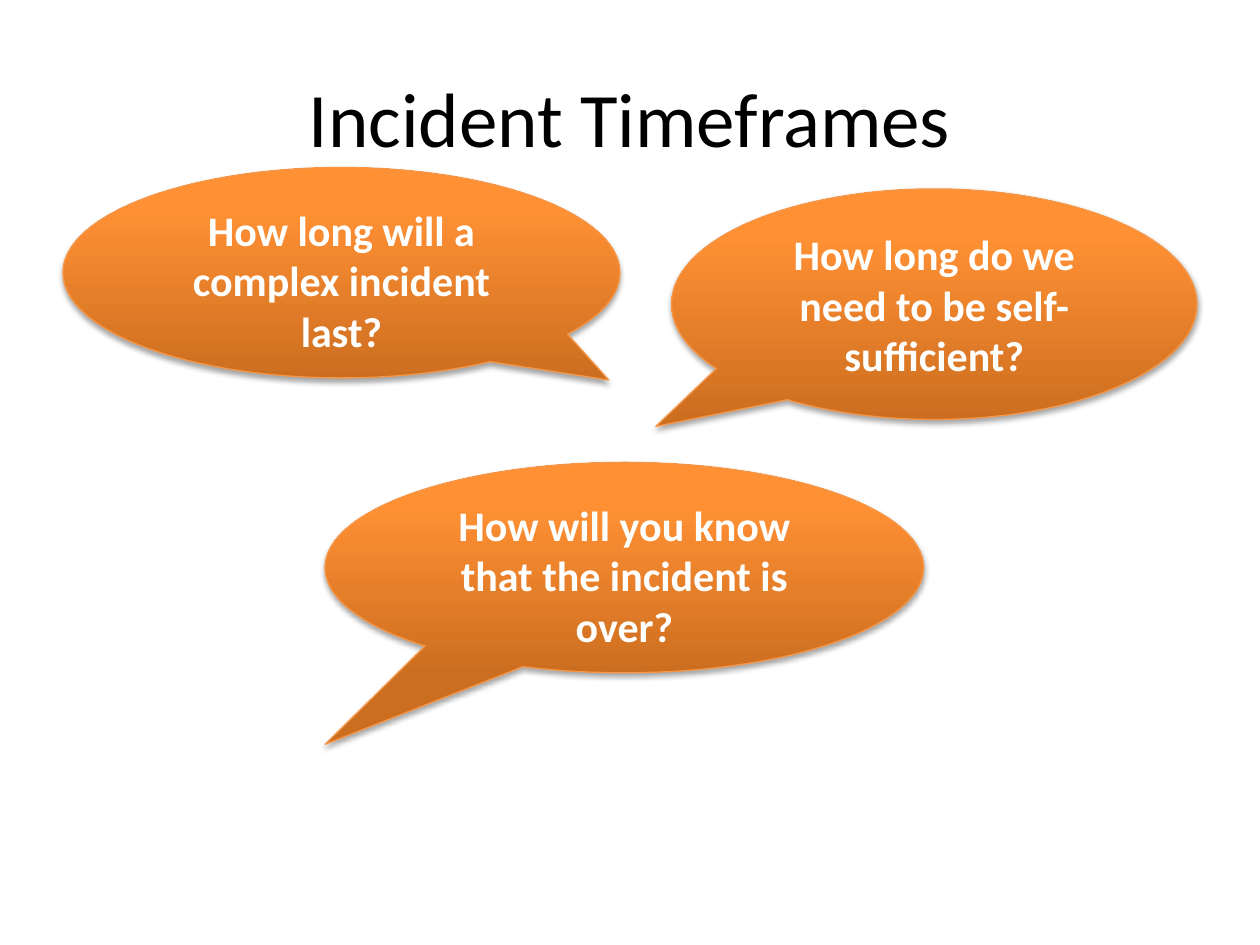
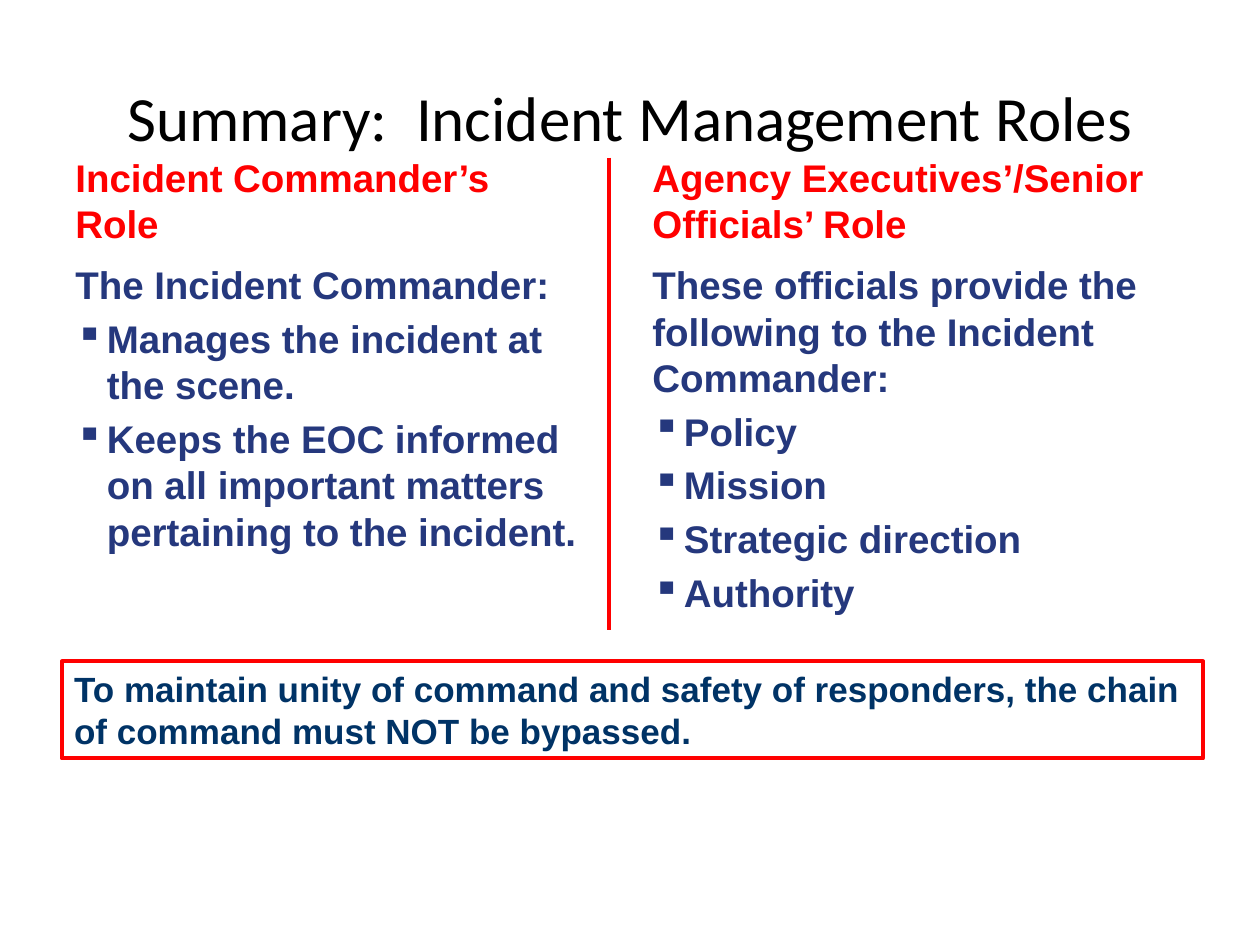
from dataclasses import dataclass

import pptx
import pptx.dml.color
import pptx.enum.shapes
import pptx.enum.text
import pptx.oxml
import pptx.oxml.ns
import pptx.slide
import pptx.text.text
import pptx.util
from lxml import etree

Inches = pptx.util.Inches
Pt = pptx.util.Pt
qn = pptx.oxml.ns.qn
Shape = pptx.enum.shapes.MSO_SHAPE
Align = pptx.enum.text.PP_ALIGN
Anchor = pptx.enum.text.MSO_ANCHOR

BLACK, WHITE, RED = "000000", "FFFFFF", "FF0000"
NAVY, DEEP_BLUE, ORANGE = "25387D", "003366", "F79646"
CALLOUT_STOPS = ((0, "CC6E20"), (80, "FF9034"), (100, "FF9136"))


@dataclass(frozen=True)
class Box:
    left: float
    top: float
    width: float
    height: float

    def emu(self) -> list[int]:
        return [Inches(v) for v in (self.left, self.top, self.width, self.height)]


@dataclass(frozen=True)
class Callout:
    text: str
    box: Box
    tip: tuple[float, float]


@dataclass(frozen=True)
class RoleColumn:
    left: float
    heading: str
    intro: str
    duties: tuple[str, ...]


TITLE_BOX = Box(0.5, 0.3, 9, 1.25)

CALLOUTS = (
    Callout("How long do we need to be self-sufficient?", Box(5.33, 1.5, 4.17, 1.83), (-0.53, 0.53)),
    Callout("How will you know that the incident is over?", Box(2.58, 3.67, 4.75, 1.67), (-0.5, 0.84)),
    Callout("How long will a complex incident last?", Box(0.5, 1.33, 4.42, 1.67), (0.48, 0.51)),
)

ROLES = (
    RoleColumn(
        0.5,
        "Incident Commander’s\vRole",
        "The Incident Commander:",
        (
            "Manages the incident at\vthe scene.",
            "Keeps the EOC informed\von all important matters\vpertaining to the incident.",
        ),
    ),
    RoleColumn(
        5.08,
        "Agency Executives’/Senior Officials’ Role",
        "These officials provide the following to the Incident Commander:",
        ("Policy", "Mission", "Strategic direction", "Authority"),
    ),
)


def rgb(color: str) -> pptx.dml.color.RGBColor:
    return pptx.dml.color.RGBColor.from_string(color)


def write(tf: pptx.text.text.TextFrame, text: str, *, size: float, color: str,
          font: str = "Arial", bold: bool = True, align: Align = Align.LEFT,
          before: float = 0, bullet: str = "") -> None:
    p = tf.paragraphs[0] if not tf.text else tf.add_paragraph()
    p.text = text
    p.alignment = align
    p.space_before = Pt(before)
    if bullet:
        pPr = p._p.get_or_add_pPr()
        pPr.set("marL", str(Inches(0.25)))
        pPr.set("indent", str(-Inches(0.25)))
        etree.SubElement(pPr, qn("a:buChar")).set("char", bullet)
    for r in p.runs:
        r.font.name = font
        r.font.size = Pt(size)
        r.font.bold = bold
        r.font.color.rgb = rgb(color)


def add_text_box(s: pptx.slide.Slide, box: Box,
                 anchor: Anchor = Anchor.TOP) -> pptx.text.text.TextFrame:
    tf = s.shapes.add_textbox(*box.emu()).text_frame
    tf.word_wrap = True
    tf.vertical_anchor = anchor
    return tf


def add_title(s: pptx.slide.Slide, text: str, size: float) -> None:
    tf = add_text_box(s, TITLE_BOX, Anchor.MIDDLE)
    write(tf, text, size=size, color=BLACK, font="Calibri", bold=False, align=Align.CENTER)


def add_color(parent: etree._Element, color: str) -> etree._Element:
    node = etree.SubElement(parent, qn("a:srgbClr"))
    node.set("val", color)
    return node


def add_callout(s: pptx.slide.Slide, callout: Callout) -> None:
    sp = s.shapes.add_shape(Shape.OVAL_CALLOUT, *callout.box.emu())
    sp.adjustments[0], sp.adjustments[1] = callout.tip
    sp.fill.gradient()
    sp.fill.gradient_angle = 90
    sp.line.color.rgb = rgb(ORANGE)
    sp.line.width = Pt(0.75)
    sp.shadow.inherit = False

    spPr = sp._element.spPr
    stops = spPr.find(qn("a:gradFill")).find(qn("a:gsLst"))
    for stop in list(stops):
        stops.remove(stop)
    for percent, color in CALLOUT_STOPS:
        stop = etree.SubElement(stops, qn("a:gs"))
        stop.set("pos", str(percent * 1000))
        add_color(stop, color)

    shadow = etree.SubElement(spPr.find(qn("a:effectLst")), qn("a:outerShdw"))
    for key, value in (("blurRad", Pt(3.1)), ("dist", Pt(1.8)), ("dir", 90 * 60000), ("rotWithShape", 0)):
        shadow.set(key, str(value))
    etree.SubElement(add_color(shadow, BLACK), qn("a:alpha")).set("val", "35000")

    tf = sp.text_frame
    tf.word_wrap = True
    tf.vertical_anchor = Anchor.TOP
    write(tf, callout.text, size=24, color=WHITE, font="Calibri", align=Align.CENTER)


def add_role(s: pptx.slide.Slide, role: RoleColumn) -> None:
    tf = add_text_box(s, Box(role.left, 1.17, 4.42, 4.95))
    write(tf, role.heading, size=22, color=RED)
    write(tf, role.intro, size=22, color=NAVY, before=8.8)
    for duty in role.duties:
        write(tf, duty, size=22, color=NAVY, before=4.4, bullet="▪")


def add_framed_note(s: pptx.slide.Slide, text: str, box: Box) -> None:
    sp = s.shapes.add_shape(Shape.RECTANGLE, *box.emu())
    sp.shadow.inherit = False
    sp.fill.background()
    sp.line.color.rgb = rgb(RED)
    sp.line.width = Pt(2.25)
    tf = sp.text_frame
    tf.word_wrap = True
    tf.vertical_anchor = Anchor.TOP
    write(tf, text, size=20, color=DEEP_BLUE)


def add_divider(s: pptx.slide.Slide, x: float, top: float, bottom: float) -> None:
    line = s.shapes.add_connector(pptx.enum.shapes.MSO_CONNECTOR.STRAIGHT,
                                  Inches(x), Inches(top), Inches(x), Inches(bottom))
    line.line.color.rgb = rgb(RED)
    line.line.width = Pt(2.25)
    etree.SubElement(line._element.spPr, qn("a:effectLst"))


def build_timeframes(s: pptx.slide.Slide) -> None:
    add_title(s, "Incident Timeframes", 44)
    for callout in CALLOUTS:
        add_callout(s, callout)


def build_summary(s: pptx.slide.Slide) -> None:
    add_title(s, "Summary:  Incident Management Roles", 36)
    for role in ROLES:
        add_role(s, role)
    add_framed_note(
        s,
        "To maintain unity of command and safety of responders, "
        "the chain of command must NOT be bypassed.",
        Box(0.49, 5.25, 9.06, 0.77),
    )
    add_divider(s, 4.83, 1.25, 5)


def main() -> None:
    prs = pptx.Presentation()
    prs.slide_width, prs.slide_height = Inches(10), Inches(7.5)
    for build in (build_timeframes, build_summary):
        build(prs.slides.add_slide(prs.slide_layouts[6]))
    prs.save("out.pptx")


if __name__ == "__main__":
    main()
